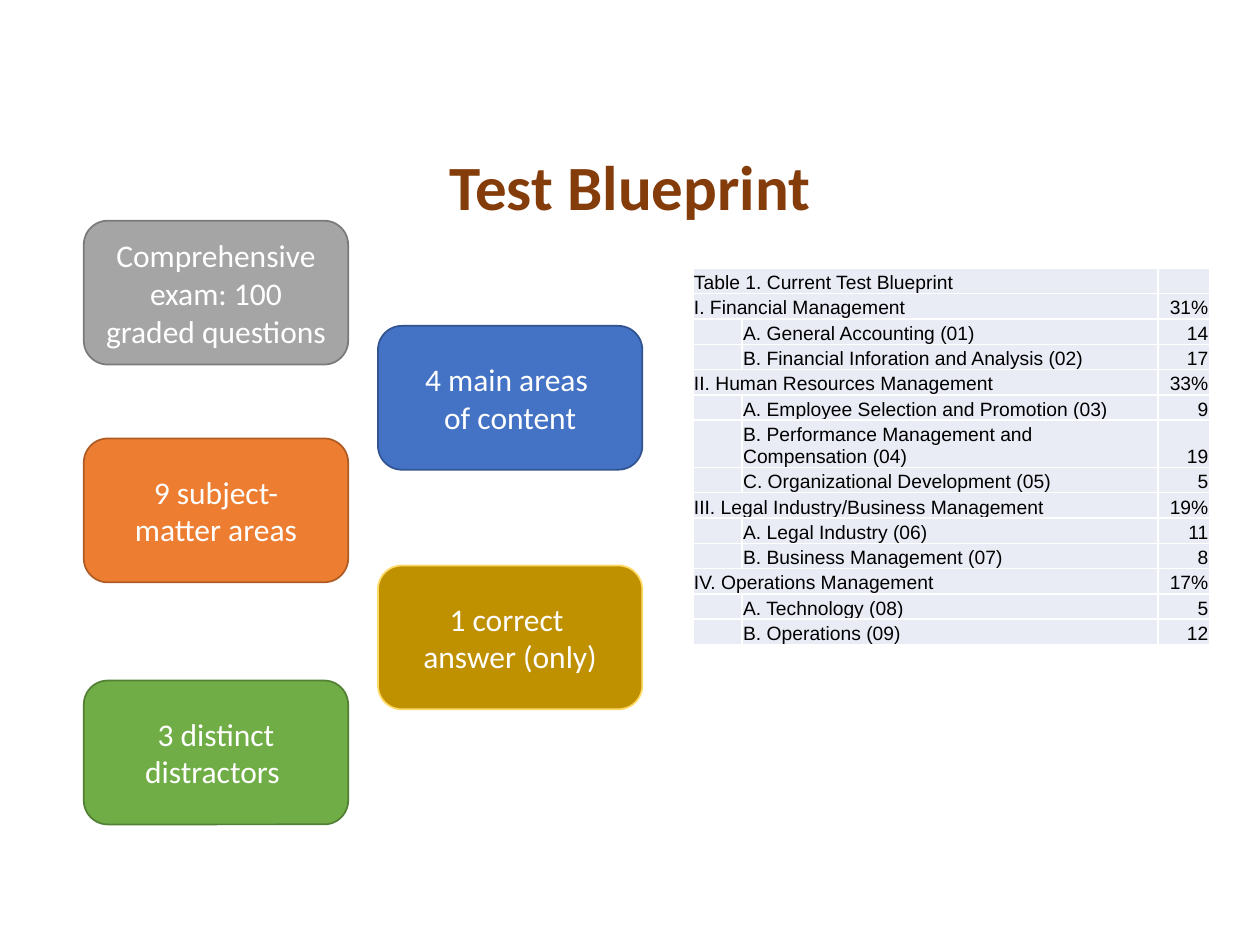
from dataclasses import dataclass

from lxml import etree
from pptx import Presentation
from pptx.dml.color import RGBColor
from pptx.enum.shapes import MSO_SHAPE
from pptx.enum.text import MSO_ANCHOR, MSO_AUTO_SIZE, PP_ALIGN
from pptx.oxml.ns import qn
from pptx.slide import Slide
from pptx.table import _Cell
from pptx.text.text import _Paragraph
from pptx.util import Cm, Pt

ROUNDED = MSO_SHAPE.ROUNDED_RECTANGLE
TOP, MIDDLE, BOTTOM = MSO_ANCHOR.TOP, MSO_ANCHOR.MIDDLE, MSO_ANCHOR.BOTTOM
LEFT, CENTER, RIGHT = PP_ALIGN.LEFT, PP_ALIGN.CENTER, PP_ALIGN.RIGHT
FIT_SHAPE = MSO_AUTO_SIZE.SHAPE_TO_FIT_TEXT
TITLE_ONLY = 5


@dataclass(frozen=True)
class TextStyle:
    font: str
    size: float
    color: str
    bold: bool = False


@dataclass(frozen=True)
class Theme:
    title: TextStyle = TextStyle("Calibri", 36, "843C0B", True)
    fact: TextStyle = TextStyle("Calibri", 18, "FFFFFF")
    table: TextStyle = TextStyle("Arial", 11, "000000")
    cell_fill: str = "E9EBF5"
    cell_border: str = "FFFFFF"
    line_width: float = 1


@dataclass(frozen=True)
class Fact:
    lines: tuple[str, ...]
    left: float
    top: float
    fill: str
    outline: str


@dataclass(frozen=True)
class BlueprintRow:
    label: str
    share: str = ""
    indented: bool = False


THEME = Theme()
LEFT_COLUMN, RIGHT_COLUMN = 1.69, 7.62
FACT_WIDTH, FACT_HEIGHT = 5.33, 2.9
COLUMN_WIDTHS = (0.99, 8.38, 1.04)
ROW_HEIGHT = 0.51

FACTS = (
    Fact(("Comprehensive exam: 100 graded questions",), LEFT_COLUMN, 4.45, "A5A5A5", "7A7A7A"),
    Fact(("4 main areas ", "of content"), RIGHT_COLUMN, 6.57, "4472C4", "325491"),
    Fact(("9 subject-", "matter areas"), LEFT_COLUMN, 8.84, "ED7D31", "AF5C24"),
    Fact(("1 correct ", "answer (only)"), RIGHT_COLUMN, 11.4, "BF9000", "FFD966"),
    Fact(("3 distinct distractors ",), LEFT_COLUMN, 13.72, "70AD47", "538035"),
)

BLUEPRINT = (
    BlueprintRow("Table 1. Current Test Blueprint"),
    BlueprintRow("I. Financial Management", "31%"),
    BlueprintRow("A. General Accounting (01)", "14", True),
    BlueprintRow("B. Financial Inforation and Analysis (02)", "17", True),
    BlueprintRow("II. Human Resources Management", "33%"),
    BlueprintRow("A. Employee Selection and Promotion (03)", "9", True),
    BlueprintRow("B. Performance Management and Compensation (04)", "19", True),
    BlueprintRow("C. Organizational Development (05)", "5", True),
    BlueprintRow("III. Legal Industry/Business Management", "19%"),
    BlueprintRow("A. Legal Industry (06)", "11", True),
    BlueprintRow("B. Business Management (07)", "8", True),
    BlueprintRow("IV. Operations Management", "17%"),
    BlueprintRow("A. Technology (08)", "5", True),
    BlueprintRow("B. Operations (09)", "12", True),
)


def add_text(paragraph: _Paragraph, text: str, style: TextStyle) -> None:
    run = paragraph.add_run()
    run.text = text
    run.font.name = style.font
    run.font.size = Pt(style.size)
    run.font.bold = style.bold
    run.font.color.rgb = RGBColor.from_string(style.color)


def add_title(slide: Slide, text: str) -> None:
    title = slide.shapes.title
    title.left, title.top, title.width, title.height = Cm(0), Cm(2.84), Cm(25.4), Cm(1.8)
    frame = title.text_frame
    frame.vertical_anchor = TOP
    frame.word_wrap = True
    frame.auto_size = FIT_SHAPE
    frame.paragraphs[0].alignment = CENTER
    add_text(frame.paragraphs[0], text, THEME.title)


def add_fact(slide: Slide, fact: Fact) -> None:
    box = slide.shapes.add_shape(
        ROUNDED, Cm(fact.left), Cm(fact.top), Cm(FACT_WIDTH), Cm(FACT_HEIGHT)
    )
    box.shadow.inherit = False
    box.fill.solid()
    box.fill.fore_color.rgb = RGBColor.from_string(fact.fill)
    box.line.color.rgb = RGBColor.from_string(fact.outline)
    box.line.width = Pt(THEME.line_width)
    frame = box.text_frame
    frame.word_wrap = True
    frame.vertical_anchor = MIDDLE
    paragraph = frame.paragraphs[0]
    paragraph.alignment = CENTER
    for index, line in enumerate(fact.lines):
        if index:
            paragraph.add_line_break()
        add_text(paragraph, line, THEME.fact)


def format_cell(cell: _Cell) -> None:
    properties = cell._tc.get_or_add_tcPr()
    for side in ("a:lnL", "a:lnR", "a:lnT", "a:lnB"):
        border = etree.SubElement(properties, qn(side), w=str(Pt(THEME.line_width)))
        fill = etree.SubElement(border, qn("a:solidFill"))
        etree.SubElement(fill, qn("a:srgbClr"), val=THEME.cell_border)
    cell.fill.solid()
    cell.fill.fore_color.rgb = RGBColor.from_string(THEME.cell_fill)
    cell.margin_left = cell.margin_right = cell.margin_top = Cm(0.02)
    cell.margin_bottom = Cm(0)
    cell.vertical_anchor = BOTTOM


def fill_cell(cell: _Cell, text: str, alignment: PP_ALIGN = LEFT) -> None:
    paragraph = cell.text_frame.paragraphs[0]
    paragraph.alignment = alignment
    if text:
        add_text(paragraph, text, THEME.table)
    else:
        etree.SubElement(paragraph._p, qn("a:endParaRPr"), sz=str(THEME.table.size * 100))


def add_blueprint(slide: Slide, rows: tuple[BlueprintRow, ...]) -> None:
    table = slide.shapes.add_table(
        len(rows), len(COLUMN_WIDTHS), Cm(13.97), Cm(5.41),
        Cm(sum(COLUMN_WIDTHS)), Cm(ROW_HEIGHT * len(rows)),
    ).table
    table.first_row = table.horz_banding = False
    for column, width in zip(table.columns, COLUMN_WIDTHS):
        column.width = Cm(width)
    for index, row in enumerate(rows):
        table.rows[index].height = Cm(ROW_HEIGHT)
        marker, label, share = table.rows[index].cells
        for cell in (marker, label, share):
            format_cell(cell)
        if not row.indented:
            marker.merge(label)
        fill_cell(marker, "" if row.indented else row.label)
        fill_cell(label, row.label if row.indented else "")
        fill_cell(share, row.share, RIGHT)


def main() -> None:
    presentation = Presentation()
    presentation.slide_width, presentation.slide_height = Cm(25.4), Cm(19.05)
    slide = presentation.slides.add_slide(presentation.slide_layouts[TITLE_ONLY])
    add_title(slide, "Test Blueprint")
    for fact in FACTS:
        add_fact(slide, fact)
    add_blueprint(slide, BLUEPRINT)
    presentation.save("out.pptx")


if __name__ == "__main__":
    main()
